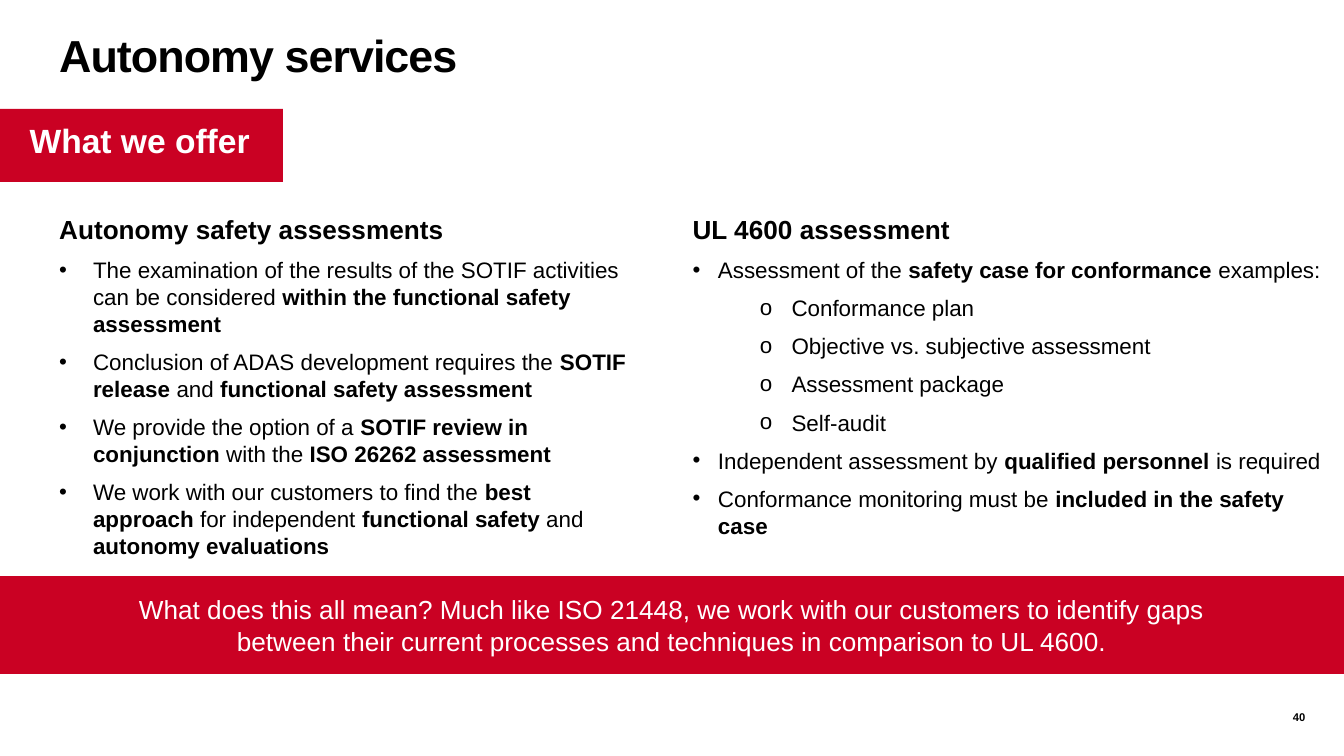
from collections import namedtuple
from dataclasses import dataclass

from lxml import etree
from pptx import Presentation
from pptx.dml.color import RGBColor
from pptx.enum.shapes import MSO_SHAPE
from pptx.enum.text import MSO_ANCHOR, PP_ALIGN
from pptx.oxml.ns import qn
from pptx.util import Cm, Pt

RECTANGLE = MSO_SHAPE.RECTANGLE
TOP, MIDDLE, BOTTOM = MSO_ANCHOR.TOP, MSO_ANCHOR.MIDDLE, MSO_ANCHOR.BOTTOM
LEFT, CENTER, RIGHT = PP_ALIGN.LEFT, PP_ALIGN.CENTER, PP_ALIGN.RIGHT

Box = namedtuple("Box", "left top width height")
Level = namedtuple("Level", "bullet margin hanging")


@dataclass(frozen=True)
class Theme:
    font: str = "Arial"
    red: RGBColor = RGBColor(0xCA, 0x01, 0x23)
    black: RGBColor = RGBColor(0, 0, 0)
    white: RGBColor = RGBColor(255, 255, 255)
    title: Pt = Pt(24)
    tag: Pt = Pt(18)
    heading: Pt = Pt(14)
    body: Pt = Pt(12)
    number: Pt = Pt(6)
    gap: Pt = Pt(6)


THEME = Theme()
SLIDE_WIDTH, SLIDE_HEIGHT = 25.4, 14.29
MARGIN = 1.12

SAFETY_LEVELS = [Level("•", 0.64, 0.64)]
UL_LEVELS = [Level("•", 0.48, 0.48), Level("o", 1.87, 0.6)]

SAFETY_POINTS = [
    (0, "The examination of the results of the SOTIF activities can be considered "
        "*within the functional safety assessment"),
    (0, "Conclusion of ADAS development requires the *SOTIF release *and "
        "*functional safety assessment"),
    (0, "We provide the option of a *SOTIF review in conjunction *with the "
        "*ISO 26262 assessment"),
    (0, "We work with our customers to find the *best approach *for independent "
        "*functional safety *and *autonomy evaluations"),
]
UL_POINTS = [
    (0, "Assessment of the *safety case for conformance *examples:"),
    (1, "Conformance plan"),
    (1, "Objective vs. subjective assessment"),
    (1, "Assessment package"),
    (1, "Self-audit"),
    (0, "Independent assessment by *qualified personnel *is required"),
    (0, "Conformance monitoring must be *included in the safety case"),
]
SUMMARY = (
    "What does this all mean? Much like ISO 21448, we work with our customers to "
    "identify gaps between their current processes and techniques in comparison to UL 4600."
)


def apply_format(target, values):
    for name, value in values.items():
        setattr(target, name, value)


def add_band(slide, box):
    band = slide.shapes.add_shape(RECTANGLE, *map(Cm, box))
    band.shadow.inherit = False
    band.fill.solid()
    band.fill.fore_color.rgb = THEME.red
    band.line.fill.background()


def add_frame(slide, box, anchor=TOP, wrap=True):
    frame = slide.shapes.add_textbox(*map(Cm, box)).text_frame
    apply_format(frame, {
        "word_wrap": wrap, "vertical_anchor": anchor,
        "margin_left": 0, "margin_right": 0, "margin_top": 0, "margin_bottom": 0,
    })
    return frame


def add_run(paragraph, text, size, color, bold):
    run = paragraph.add_run()
    run.text = text
    apply_format(run.font, {"name": THEME.font, "size": size, "bold": bold})
    run.font.color.rgb = color
    return run


def add_line(slide, box, text, size, color, bold=True, align=LEFT, spacing=1.0,
             anchor=TOP, wrap=True):
    paragraph = add_frame(slide, box, anchor, wrap).paragraphs[0]
    apply_format(paragraph, {"alignment": align, "line_spacing": spacing})
    return add_run(paragraph, text, size, color, bold)


def set_bullet(paragraph, level):
    properties = paragraph._p.get_or_add_pPr()
    properties.set("marL", str(Cm(level.margin)))
    properties.set("indent", str(-Cm(level.hanging)))
    etree.SubElement(properties, qn("a:buFont")).set("typeface", THEME.font)
    etree.SubElement(properties, qn("a:buChar")).set("char", level.bullet)


def add_title(slide, box):
    title = add_line(slide, box, "Autonomy services", THEME.title, THEME.black)
    title.font._element.set("spc", "-50")


def add_tag(slide, box):
    add_band(slide, box)
    label = Box(box.left + 0.56, box.top + 0.3, 9.6, box.height)
    add_line(slide, label, "What we offer", THEME.tag, THEME.white, spacing=0.9)


def add_column(slide, box, heading, points, levels):
    frame = add_frame(slide, box)
    first = frame.paragraphs[0]
    first.space_after = THEME.gap
    add_run(first, heading, THEME.heading, THEME.black, True)
    for depth, text in points:
        point = frame.add_paragraph()
        set_bullet(point, levels[depth])
        apply_format(point, {"level": depth, "space_after": THEME.gap})
        for position, part in enumerate(text.split("*")):
            add_run(point, part, THEME.body, THEME.black, position % 2 == 1)


def add_summary(slide, box):
    add_band(slide, box)
    inset = 2.25
    message = Box(box.left + inset, box.top, box.width - 2 * inset, box.height)
    add_line(slide, message, SUMMARY, THEME.heading, THEME.white, bold=False,
             align=CENTER, anchor=MIDDLE)


def add_page_number(slide, box):
    add_line(slide, box, "40", THEME.number, THEME.black, align=RIGHT,
             anchor=BOTTOM, wrap=False)


def main():
    deck = Presentation()
    deck.slide_width, deck.slide_height = Cm(SLIDE_WIDTH), Cm(SLIDE_HEIGHT)
    slide = deck.slides.add_slide(deck.slide_layouts[6])
    add_title(slide, Box(MARGIN, 0.53, 22.94, 1.02))
    add_tag(slide, Box(0, 2.06, 5.35, 1.38))
    add_column(slide, Box(MARGIN, 4.04, 10.74, 7.39),
               "Autonomy safety assessments", SAFETY_POINTS, SAFETY_LEVELS)
    add_column(slide, Box(13.09, 4.04, 11.96, 6.2),
               "UL 4600 assessment", UL_POINTS, UL_LEVELS)
    add_summary(slide, Box(0, 10.89, SLIDE_WIDTH, 1.85))
    add_page_number(slide, Box(23.83, 13.31, 0.84, 0.38))
    deck.save("out.pptx")


if __name__ == "__main__":
    main()
